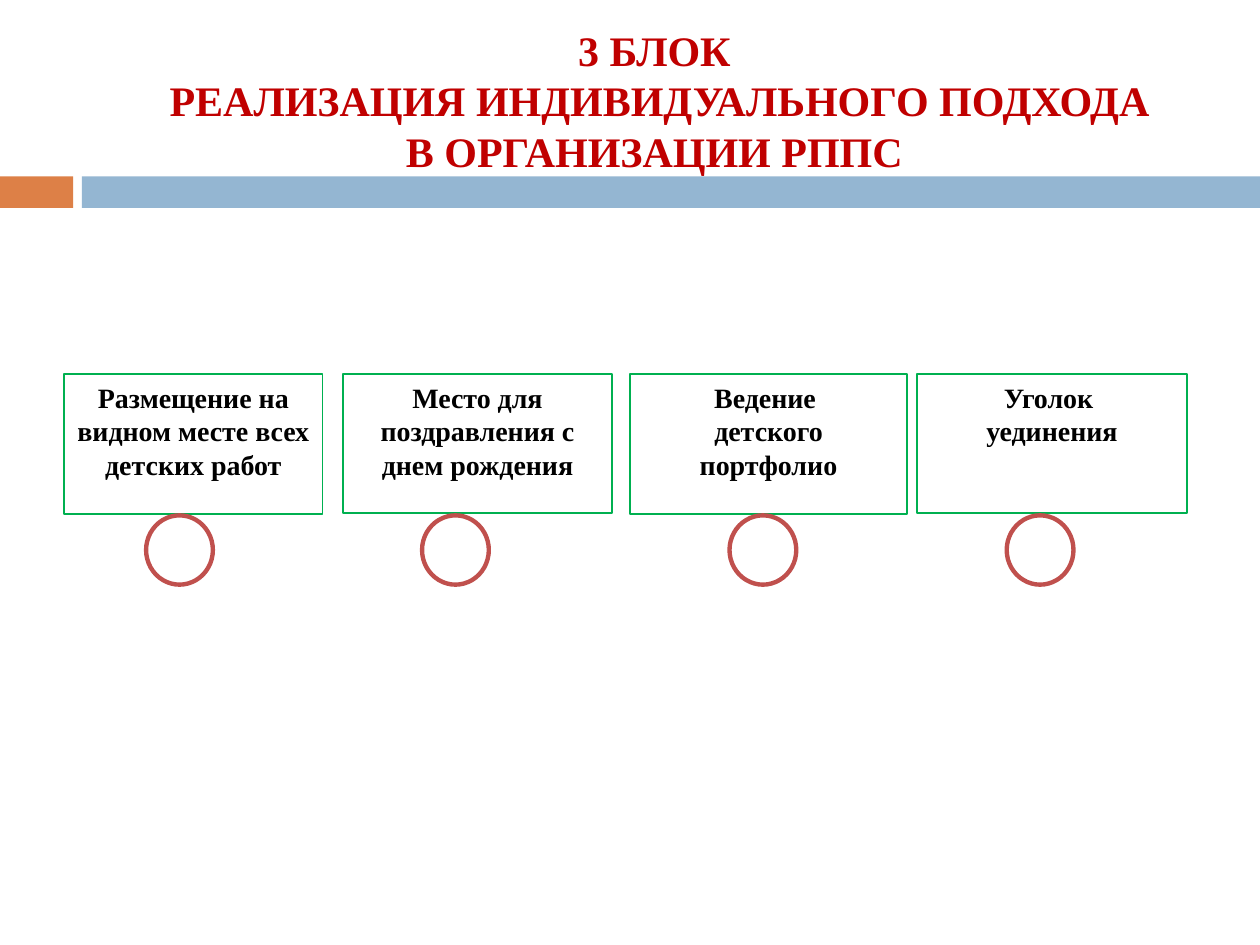
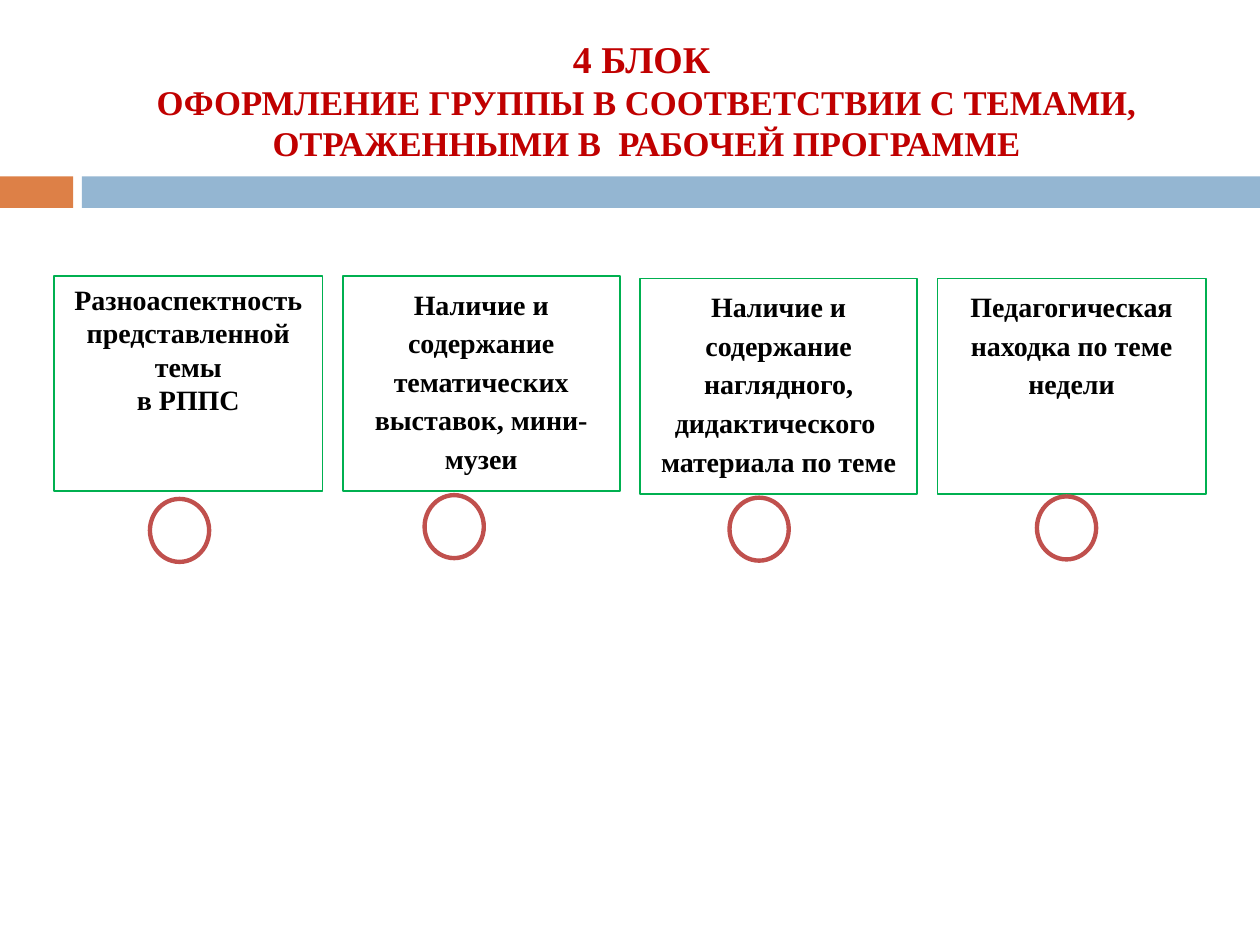
"""Builds two slides on the organisation of the preschool learning environment."""
from pptx import Presentation
from pptx.dml.color import RGBColor
from pptx.enum.shapes import MSO_SHAPE
from pptx.enum.text import MSO_ANCHOR, MSO_AUTO_SIZE, PP_ALIGN
from pptx.util import Inches, Pt

FONT = "Times New Roman"
COLORS = {
    "orange": "DD8047",
    "blue": "94B6D2",
    "title": "C00000",
    "box": "00B050",
    "circle": "C0504D",
    "white": "FFFFFF",
    "text": "000000",
}
BANDS = [(0, 0.58, "orange"), (0.65, 9.35, "blue")]


def rgb(name):
    return RGBColor.from_string(COLORS[name])


def add_figure(slide, kind, at, fill, line=None, width=1):
    sp = slide.shapes.add_shape(kind, *map(Inches, at))
    sp.shadow.inherit = False
    sp.fill.solid()
    sp.fill.fore_color.rgb = rgb(fill)
    if line:
        sp.line.color.rgb = rgb(line)
        sp.line.width = Pt(width)
    else:
        sp.line.fill.background()
    return sp


def write_lines(tf, lines, sizes, color, spacing=1.0):
    tf.word_wrap = True
    tf.auto_size = MSO_AUTO_SIZE.NONE
    for i, (text, size) in enumerate(zip(lines, sizes)):
        p = tf.paragraphs[0] if i == 0 else tf.add_paragraph()
        p.text = text
        p.alignment = PP_ALIGN.CENTER
        p.line_spacing = spacing
        p.font.name = FONT
        p.font.size = Pt(size)
        p.font.bold = True
        p.font.color.rgb = rgb(color)


def add_bands(slide):
    """Draw the bands once and move them to the layout behind its placeholders."""
    tree = slide.slide_layout.shapes._spTree
    for i, (left, width, color) in enumerate(BANDS):
        sp = add_figure(slide, MSO_SHAPE.RECTANGLE, (left, 1.4, width, 0.25), color)
        sp._element.nvSpPr.cNvPr.set("id", str(20 + i))
        tree.insert(2 + i, sp._element)


def set_title(slide, at, lines, sizes):
    title = slide.shapes.title
    title.left, title.top, title.width, title.height = map(Inches, at)
    title.text_frame.vertical_anchor = MSO_ANCHOR.MIDDLE
    write_lines(title.text_frame, lines, sizes, "title")


def add_box(slide, at, lines, spacing=1.0):
    sp = add_figure(slide, MSO_SHAPE.RECTANGLE, at, "white", "box")
    sp.text_frame.vertical_anchor = MSO_ANCHOR.TOP
    write_lines(sp.text_frame, lines, [16] * len(lines), "text", spacing)


def add_circles(slide, positions, width, height):
    for left, top in positions:
        add_figure(slide, MSO_SHAPE.OVAL, (left, top, width, height),
                   "white", "circle", 2.5)


def build_individual_approach(slide):
    set_title(slide, (1.14, 0.13, 8.19, 1.33),
              ["3 БЛОК ",
               "РЕАЛИЗАЦИЯ ИНДИВИДУАЛЬНОГО ПОДХОДА В ОРГАНИЗАЦИИ РППС "],
              [24, 24])
    boxes = [
        (0.51, 2.05, 1.11, ["Размещение на видном месте всех детских работ"]),
        (2.72, 2.14, 1.1, ["Место для поздравления с днем рождения"]),
        (5, 2.2, 1.11, ["Ведение ", "детского портфолио"]),
        (7.28, 2.14, 1.1, ["Уголок ", "уединения"]),
    ]
    for left, width, height, lines in boxes:
        add_box(slide, (left, 2.97, width, height), lines)
    add_circles(slide, [(left, 4.09) for left in (1.16, 3.35, 5.79, 7.99)], 0.53, 0.55)


def build_weekly_themes(slide):
    set_title(slide, (0.67, 0.25, 8.92, 1.08),
              ["4 БЛОК ",
               "ОФОРМЛЕНИЕ ГРУППЫ В СООТВЕТСТВИИ С ТЕМАМИ,",
               "ОТРАЖЕННЫМИ В  РАБОЧЕЙ ПРОГРАММЕ"],
              [21.6, 19.8, 19.8])
    boxes = [
        (0.43, 2.19, 2.13, 1, ["Разноаспектность представленной темы", "в РППС"]),
        (2.72, 2.19, 2.2, 1.15,
         ["Наличие и содержание тематических выставок, мини- музеи"]),
        (5.08, 2.21, 2.2, 1.15,
         ["Наличие и содержание наглядного, дидактического  материала по теме"]),
        (7.44, 2.21, 2.13, 1.15, ["Педагогическая находка по теме недели"]),
    ]
    for left, top, width, spacing, lines in boxes:
        add_box(slide, (left, top, width, 1.71), lines, float(spacing))
    add_circles(slide, [(1.19, 3.96), (3.37, 3.93), (5.79, 3.95), (8.23, 3.94)], 0.47, 0.5)


def main():
    prs = Presentation()
    prs.slide_width, prs.slide_height = Inches(10), Inches(7.5)
    layout = prs.slide_layouts.get_by_name("Title Only")
    slides = [prs.slides.add_slide(layout) for _ in range(2)]
    add_bands(slides[0])
    build_individual_approach(slides[0])
    build_weekly_themes(slides[1])
    prs.save("out.pptx")


if __name__ == "__main__":
    main()
